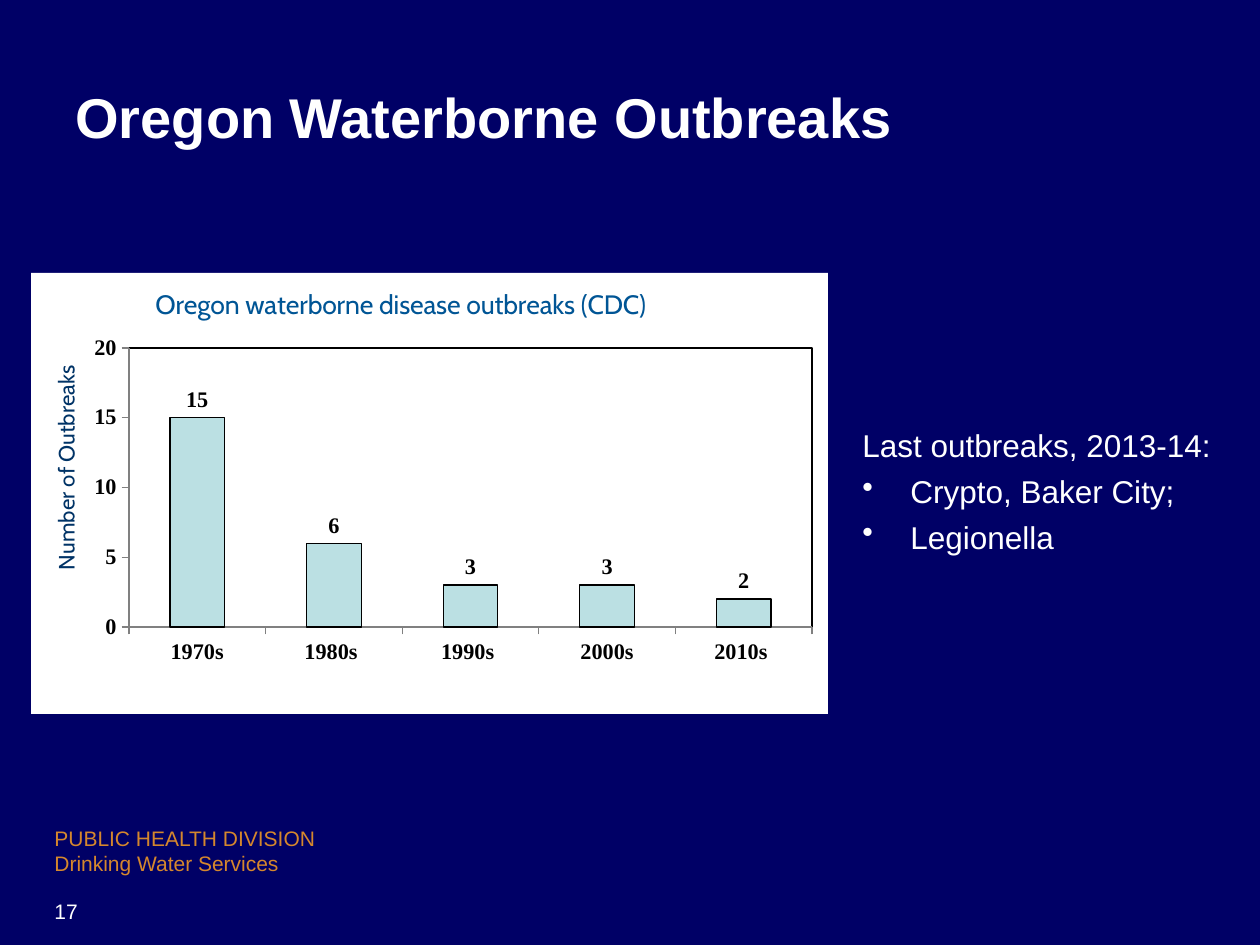
from lxml import etree
from pptx import Presentation
from pptx import util as u
from pptx.chart.data import CategoryChartData
from pptx.dml.color import RGBColor
from pptx.enum import chart as kinds, text
from pptx.oxml import parse_xml
from pptx.oxml.ns import nsdecls, qn

NAVY = RGBColor(0x00, 0x00, 0x66)
WHITE = RGBColor(0xFF, 0xFF, 0xFF)
BLACK = RGBColor(0x00, 0x00, 0x00)
ORANGE = RGBColor(0xD5, 0x87, 0x2D)
BLUE = RGBColor(0x00, 0x55, 0x95)
DARK_BLUE = RGBColor(0x00, 0x33, 0x66)
AQUA = RGBColor(0xBB, 0xE0, 0xE3)
GREY = RGBColor(0x80, 0x80, 0x80)

SCALE = 914400 / 126
WIDTH, HEIGHT = 1260, 945
INDENT = 48

BOXES = [
    ((42, 819, 483, 66), ["PUBLIC HEALTH DIVISION\vDrinking Water Services"],
     dict(size=12, color=ORANGE), text.MSO_ANCHOR.TOP),
    ((63, 38, 1134, 157), ["Oregon Waterborne Outbreaks"],
     dict(size=32, color=WHITE, bold=True), text.MSO_ANCHOR.MIDDLE),
    ((850, 420, 388, 180), ["Last outbreaks, 2013-14:", "• Crypto, Baker City;", "• Legionella"],
     dict(size=18, color=WHITE), text.MSO_ANCHOR.TOP),
    ((42, 892, 262, 42), ["17"], dict(size=12, color=WHITE), text.MSO_ANCHOR.TOP),
]
CHART_AREA = (31, 273, 797, 441)
CHART_TITLE = "Oregon waterborne disease outbreaks (CDC)"
AXIS_TITLE = "Number of Outbreaks"
OUTBREAKS = {"1970s": 15, "1980s ": 6, "1990s ": 3, " 2000s ": 3, "2010s ": 2}


def emu(px):
    return u.Emu(round(px * SCALE))


def style_font(font, size, color, name="Arial", bold=False):
    font.color.rgb = color
    for key, value in dict(size=u.Pt(size), name=name, bold=bold).items():
        setattr(font, key, value)


def add_bullet(para):
    props = para._p.get_or_add_pPr()
    props.set("marL", str(emu(INDENT)))
    props.set("indent", str(-emu(INDENT)))
    etree.SubElement(props, qn("a:buChar")).set("char", "•")


def add_text(page, area, lines, style, anchor):
    box = page.shapes.add_textbox(*map(emu, area))
    frame = box.text_frame
    frame.word_wrap = True
    frame.vertical_anchor = anchor
    for index, line in enumerate(lines):
        para = frame.add_paragraph() if index else frame.paragraphs[0]
        if line.startswith("• "):
            add_bullet(para)
        para.text = line.removeprefix("• ")
        if index:
            para.space_before = u.Pt(4.5)
        for span in para.runs:
            style_font(span.font, **style)


def make_layout(**values):
    layout = parse_xml(f"<c:layout {nsdecls('c')}><c:manualLayout/></c:layout>")
    for key, value in values.items():
        etree.SubElement(layout[0], qn(f"c:{key}")).set("val", str(value))
    return layout


def make_fill(fill, line):
    return parse_xml(
        f"<c:spPr {nsdecls('c', 'a')}><a:solidFill><a:srgbClr val='{fill}'/></a:solidFill>"
        f"<a:ln w='8890'>{line}</a:ln></c:spPr>")


def drop_layout(element):
    for old in element.findall(qn("c:layout")):
        element.remove(old)


def set_title(title, words, size, color, x, y):
    title.text_frame.text = words
    style_font(title.text_frame.paragraphs[0].runs[0].font, size, color, "Cabin")
    element = title._element
    drop_layout(element)
    element.find(qn("c:tx")).addnext(make_layout(xMode="edge", yMode="edge", x=x, y=y))


def add_outbreak_chart(page):
    data = CategoryChartData()
    data.categories = list(OUTBREAKS)
    data.add_series("Series 1", list(OUTBREAKS.values()))
    chart = page.shapes.add_chart(
        kinds.XL_CHART_TYPE.COLUMN_CLUSTERED, *map(emu, CHART_AREA), data).chart
    chart.has_legend = False
    style_font(chart.font, 12.7, BLACK, "Times New Roman", True)

    set_title(chart.chart_title, CHART_TITLE, 15.2, BLUE, 0.15, 0.02)
    chart.chart_title.include_in_layout = True
    overlay = chart.chart_title._element.find(qn("c:overlay"))
    if overlay is not None:
        overlay.set("val", "1")

    values = chart.value_axis
    for key, value in dict(minimum_scale=0, maximum_scale=20, major_unit=5,
                           has_major_gridlines=False).items():
        setattr(values, key, value)
    set_title(values.axis_title, AXIS_TITLE, 12.7, DARK_BLUE, 0.02, 0.2)
    body = values.axis_title.text_frame._txBody.bodyPr
    body.set("rot", "-5400000")
    body.set("vert", "horz")
    for axis in (values, chart.category_axis):
        axis.major_tick_mark = kinds.XL_TICK_MARK.OUTSIDE
        axis.format.line.color.rgb = GREY
        axis.format.line.width = u.Pt(0.7)

    plot = chart.plots[0]
    plot.gap_width = 150
    plot.vary_by_categories = False
    plot.has_data_labels = True
    plot.data_labels.show_value = True
    plot.data_labels.position = kinds.XL_LABEL_POSITION.OUTSIDE_END
    style_font(plot.data_labels.font, 12.7, BLACK, "Times New Roman", True)
    bars = plot.series[0].format
    bars.fill.solid()
    bars.fill.fore_color.rgb = AQUA
    bars.line.color.rgb = BLACK
    bars.line.width = u.Pt(0.7)

    root = chart._chartSpace.find(qn("c:chart"))
    area = root.find(qn("c:plotArea"))
    drop_layout(area)
    area.insert(0, make_layout(layoutTarget="inner", xMode="edge", yMode="edge",
                               x=0.123, y=0.17, w=0.857, h=0.633))
    area.append(make_fill(WHITE, f"<a:solidFill><a:srgbClr val='{BLACK}'/></a:solidFill>"))
    root.addnext(make_fill(WHITE, "<a:noFill/>"))


def main():
    deck = Presentation()
    deck.slide_width, deck.slide_height = emu(WIDTH), emu(HEIGHT)
    page = deck.slides.add_slide(deck.slide_layouts[6])
    page.background.fill.solid()
    page.background.fill.fore_color.rgb = NAVY
    for box in BOXES:
        add_text(page, *box)
    add_outbreak_chart(page)
    deck.save("out.pptx")


if __name__ == "__main__":
    main()
